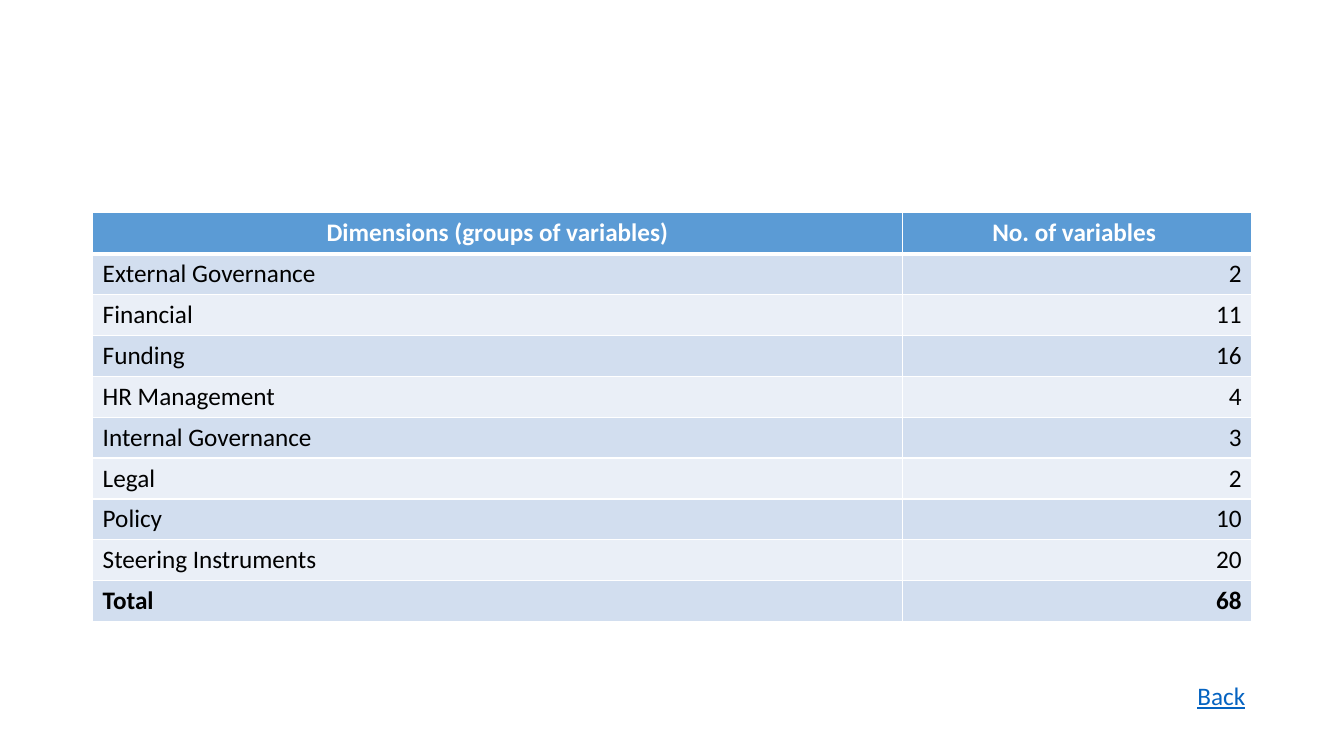
from lxml import etree
from pptx import Presentation
from pptx.dml.color import RGBColor
from pptx.enum import text as t
from pptx.oxml import ns
from pptx.util import Pt

WHITE = RGBColor(0xFF, 0xFF, 0xFF)
BLACK = RGBColor(0, 0, 0)
HEAD = RGBColor(0x5B, 0x9B, 0xD5)
DARK = RGBColor(0xD2, 0xDE, 0xEF)
PALE = RGBColor(0xEA, 0xEF, 0xF7)
LINK = RGBColor(0x05, 0x63, 0xC1)

ROWS = [
    ("Dimensions (groups of variables)", "No. of variables "),
    ("External Governance", "2"),
    ("Financial", "11"),
    ("Funding", "16"),
    ("HR Management", "4"),
    ("Internal Governance", "3"),
    ("Legal", "2"),
    ("Policy", "10"),
    ("Steering Instruments", "20"),
    ("Total", "68"),
]
WIDTHS = (578.3, 249.7)
ROW_H = 29.2


def add_run(para, words, color, bold=False, line=False):
    """Add one formatted run to a paragraph."""
    run = para.add_run()
    run.text = words
    font = run.font
    font.name = "Calibri"
    font.size = Pt(18)
    font.color.rgb = color
    font.bold = bold
    font.underline = line


def add_edges(cell, top, base):
    """Draw white borders around a table cell."""
    props = cell._tc.get_or_add_tcPr()
    for side, width in (("L", 1), ("R", 1), ("T", top), ("B", base)):
        edge = etree.SubElement(props, ns.qn(f"a:ln{side}"), w=str(Pt(width)))
        fill = etree.SubElement(edge, ns.qn("a:solidFill"))
        etree.SubElement(fill, ns.qn("a:srgbClr"), val=str(WHITE))


def fill_cell(cell, words, row, col):
    """Style and fill a cell according to its row and column."""
    head = row == 0
    add_edges(cell, 3 if row == 1 else 1, 3 if head else 1)
    cell.fill.solid()
    cell.fill.fore_color.rgb = HEAD if head else (PALE, DARK)[row % 2]
    para = cell.text_frame.paragraphs[0]
    sides = (t.PP_ALIGN.LEFT, t.PP_ALIGN.RIGHT)
    para.alignment = t.PP_ALIGN.CENTER if head else sides[col]
    bold = row in (0, len(ROWS) - 1)
    add_run(para, words, WHITE if head else BLACK, bold)


def add_grid(slide):
    """Add the table of dimensions and variable counts."""
    frame = slide.shapes.add_table(len(ROWS), len(WIDTHS), Pt(66.2), Pt(152),
                                   Pt(sum(WIDTHS)), Pt(ROW_H * len(ROWS)))
    grid = frame.table
    for col, width in zip(grid.columns, WIDTHS):
        col.width = Pt(width)
    for row, cells in enumerate(ROWS):
        grid.rows[row].height = Pt(ROW_H)
        for col, words in enumerate(cells):
            fill_cell(grid.cell(row, col), words, row, col)


def add_back(slide):
    """Add the underlined label at the lower right."""
    box = slide.shapes.add_textbox(Pt(848.2), Pt(482.4), Pt(51.8), Pt(28.8))
    frame = box.text_frame
    frame.word_wrap = False
    frame.auto_size = t.MSO_AUTO_SIZE.SHAPE_TO_FIT_TEXT
    para = frame.paragraphs[0]
    add_run(para, "Back", LINK, line=True)
    add_run(para, " ", BLACK)


def main():
    """Build and save the slide."""
    deck = Presentation()
    deck.slide_width = Pt(960)
    deck.slide_height = Pt(540)
    slide = deck.slides.add_slide(deck.slide_layouts[6])
    add_grid(slide)
    add_back(slide)
    deck.save("out.pptx")


if __name__ == "__main__":
    main()
